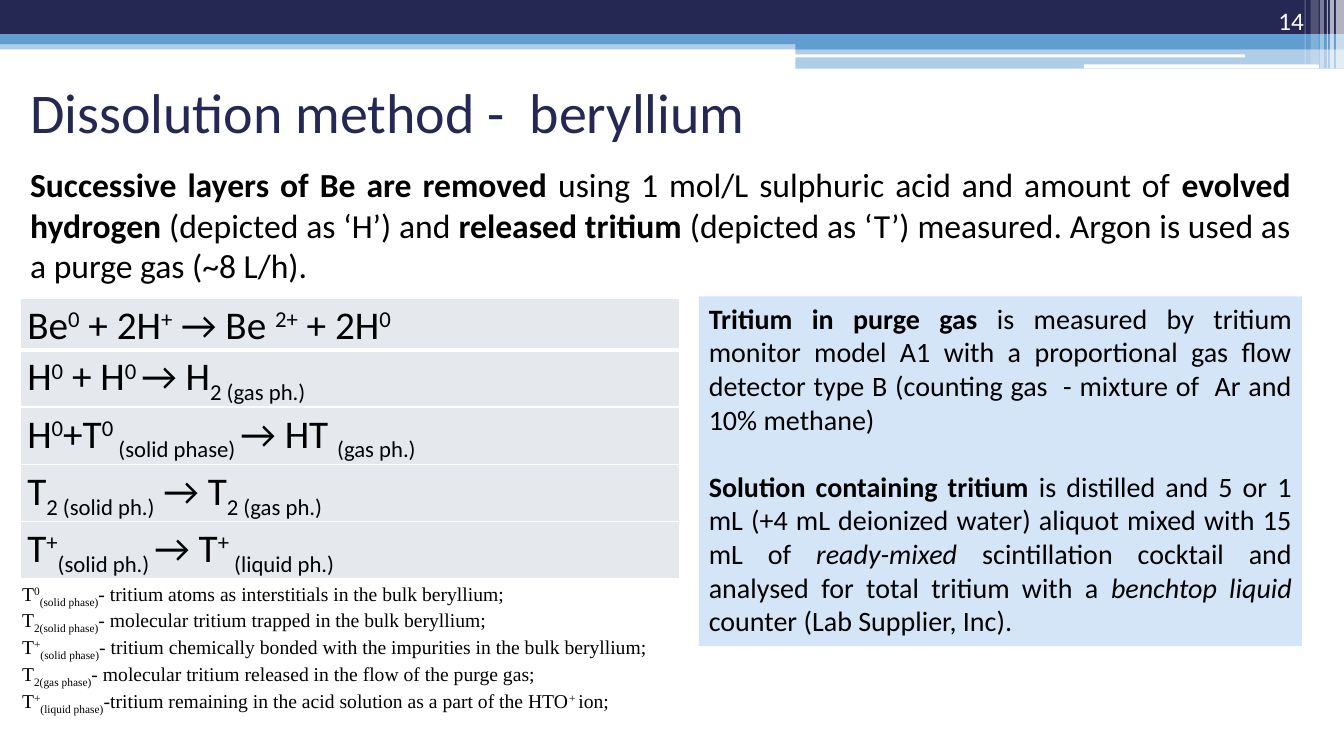
import lxml.etree
import pptx
import pptx.dml.color
import pptx.enum.shapes
import pptx.enum.text
import pptx.oxml.ns
import pptx.util

WIDTH = pptx.util.Inches(13.33)
HEIGHT = pptx.util.Inches(7.5)
NAVY, BLUE, WHITE, BLACK = "242852", "629DD1", "FFFFFF", "000000"
CELL_GREY, PANEL_BLUE = "E5E9EE", "D4E5F7"
RECTANGLE = pptx.enum.shapes.MSO_SHAPE.RECTANGLE
ROUNDED = pptx.enum.shapes.MSO_SHAPE.ROUNDED_RECTANGLE
ALIGN = pptx.enum.text.PP_ALIGN
ANCHOR = pptx.enum.text.MSO_ANCHOR
BASELINES = {"^": "30000", "_": "-25000"}

BANDS = [
    (RECTANGLE, (0, 5.33, 100, 1.2), BLUE, 50),
    (RECTANGLE, (0, 0, 100, 4.53), NAVY, 100),
    (RECTANGLE, (0, 4.53, 100, 1.33), BLUE, 100),
    (RECTANGLE, (59.19, 5.2, 40.81, 1.33), BLUE, 100),
    (RECTANGLE, (59.19, 6.4, 40.81, 2.67), BLUE, 50),
    (ROUNDED, (59.11, 7.2, 33.53, 0.4), WHITE, 100),
    (ROUNDED, (80.65, 8.53, 17.48, 0.53), WHITE, 100),
]
STRIPES = [
    (99.4, 0.6, 9.07, 65),
    (98.95, 0.3, 9.07, 65),
    (98.72, 0.08, 9.07, 60),
    (98.2, 0.3, 9.07, 40),
    (97.52, 0.6, 8.53, 20),
    (97.07, 0.08, 8.53, 30),
]
REACTIONS = [
    "Be|^0| + 2H|^+| → Be |^2+| + 2H|^0",
    "H|^0| + H|^0 |→ H|_2 (gas ph.)",
    "H|^0|+T|^0 |_(solid phase) |→ HT |_(gas ph.)",
    "T|_2 (solid ph.)| → T|_2 (gas ph.)",
    "T|^+|_(solid ph.) |→ T|^+ |_(liquid ph.)",
]
METHOD = [
    "*Successive layers of Be are removed |using 1 mol/L sulphuric acid and amount of "
    "|*evolved hydrogen |(depicted as ‘H’) and |*released tritium "
    "|(depicted as ‘T’) measured. Argon is used as a purge gas (~8 L/h).",
]
LEGEND = [
    "T|^0|_(solid phase)|- tritium atoms as interstitials in the bulk beryllium;",
    "T|_2(solid phase)|- molecular tritium trapped in the bulk beryllium;",
    "T|^+|_(solid phase)|- tritium chemically bonded with the impurities in the bulk beryllium;",
    "T|_2(gas phase)|- molecular tritium released in the flow of the purge gas;",
    "T|^+|_(liquid phase)|-tritium remaining in the acid solution as a part of the HTO|^+ |ion;",
]
MEASUREMENT = [
    "*Tritium in purge gas |is measured by tritium monitor model A1 with a proportional "
    "gas flow detector type B (counting gas  - mixture of  Ar and 10% methane)",
    "*Solution containing tritium |is distilled and 5 or 1 mL (+4 mL deionized water) "
    "aliquot mixed with 15 mL of |/ready-mixed |scintillation cocktail and analysed for "
    "total tritium with a |/benchtop liquid |counter (Lab Supplier, Inc).",
]


def color(value):
    return pptx.dml.color.RGBColor.from_string(value)


def across(percent):
    return round(WIDTH * percent / 100)


def down(percent):
    return round(HEIGHT * percent / 100)


def place(area):
    left, top, width, height = area
    return across(left), down(top), across(width), down(height)


def add_runs(paragraph, marked, size, font, ink):
    for part in marked.split("|"):
        mark = part[0] if part[0] in "*/_" or part[0] == "^" else ""
        text = part[len(mark):]
        run = paragraph.add_run()
        run.text = text
        run.font.size = pptx.util.Pt(size)
        run.font.name = font
        run.font.color.rgb = color(ink)
        run.font.bold = mark == "*"
        run.font.italic = mark == "/"
        if mark in BASELINES:
            run._r.get_or_add_rPr().set("baseline", BASELINES[mark])


def write(shape, paragraphs, size, ink=BLACK, font="Calibri", align=ALIGN.LEFT,
          anchor=ANCHOR.TOP, gap=0):
    frame = shape.text_frame
    frame.word_wrap = True
    frame.vertical_anchor = anchor
    for index, marked in enumerate(paragraphs):
        paragraph = frame.add_paragraph() if index else frame.paragraphs[0]
        paragraph.alignment = align
        paragraph.space_before = pptx.util.Pt(gap if index else 0)
        add_runs(paragraph, marked, size, font, ink)


def add_text(slide, area, paragraphs, size, **style):
    write(slide.shapes.add_textbox(*place(area)), paragraphs, size, **style)


def add_block(slide, kind, area, fill, opacity=100):
    shape = slide.shapes.add_shape(kind, *place(area))
    shape.shadow.inherit = False
    shape.fill.solid()
    shape.fill.fore_color.rgb = color(fill)
    shape.line.fill.background()
    if opacity < 100:
        solid = shape._element.spPr.find(pptx.oxml.ns.qn("a:solidFill"))
        lxml.etree.SubElement(solid[0], pptx.oxml.ns.qn("a:alpha"), val=str(opacity * 1000))
    return shape


def add_borders(cell, bottom):
    properties = cell._tc.get_or_add_tcPr()
    for side, points in (("L", 1), ("R", 1), ("T", 1), ("B", bottom)):
        line = lxml.etree.SubElement(
            properties, pptx.oxml.ns.qn("a:ln" + side), w=str(pptx.util.Pt(points)))
        solid = lxml.etree.SubElement(line, pptx.oxml.ns.qn("a:solidFill"))
        lxml.etree.SubElement(solid, pptx.oxml.ns.qn("a:srgbClr"), val=WHITE)


def add_reactions(slide, area):
    table = slide.shapes.add_table(len(REACTIONS), 1, *place(area)).table
    table.first_row = False
    table.horz_banding = False
    for index, reaction in enumerate(REACTIONS):
        table.rows[index].height = down(7.5 if index else 6.8)
        cell = table.cell(index, 0)
        add_borders(cell, 1 if index else 3)
        cell.fill.solid()
        cell.fill.fore_color.rgb = color(CELL_GREY)
        cell.margin_left = cell.margin_right = across(0.53)
        cell.margin_top = cell.margin_bottom = 0
        paragraph = cell.text_frame.paragraphs[0]
        paragraph.line_spacing = 1.07
        add_runs(paragraph, reaction, 28, "Calibri", BLACK)


def main():
    presentation = pptx.Presentation()
    presentation.slide_width = WIDTH
    presentation.slide_height = HEIGHT
    slide = presentation.slides.add_slide(presentation.slide_layouts[6])

    for band in BANDS:
        add_block(slide, *band)
    for left, width, height, opacity in STRIPES:
        add_block(slide, RECTANGLE, (left, 0, width, height), WHITE, opacity)

    add_text(slide, (1.5, 6.93, 90, 15.6), ["Dissolution method -  beryllium"], 40,
             ink=NAVY, anchor=ANCHOR.MIDDLE)
    add_reactions(slide, (1.5, 39.47, 49.06, 36.8))
    add_text(slide, (1.5, 21.07, 95.27, 17.47), METHOD, 24, align=ALIGN.JUSTIFY)
    add_text(slide, (0.9, 76.27, 49.06, 19.07), LEGEND, 14, font="Times New Roman")
    panel = add_block(slide, RECTANGLE, (52, 39.2, 44.86, 46.27), PANEL_BLUE)
    write(panel, MEASUREMENT, 20, align=ALIGN.JUSTIFY, gap=24)
    add_text(slide, (89.42, 0, 8.33, 5.33), ["14"], 18, ink=WHITE,
             align=ALIGN.RIGHT, anchor=ANCHOR.BOTTOM)

    presentation.save("out.pptx")


if __name__ == "__main__":
    main()
